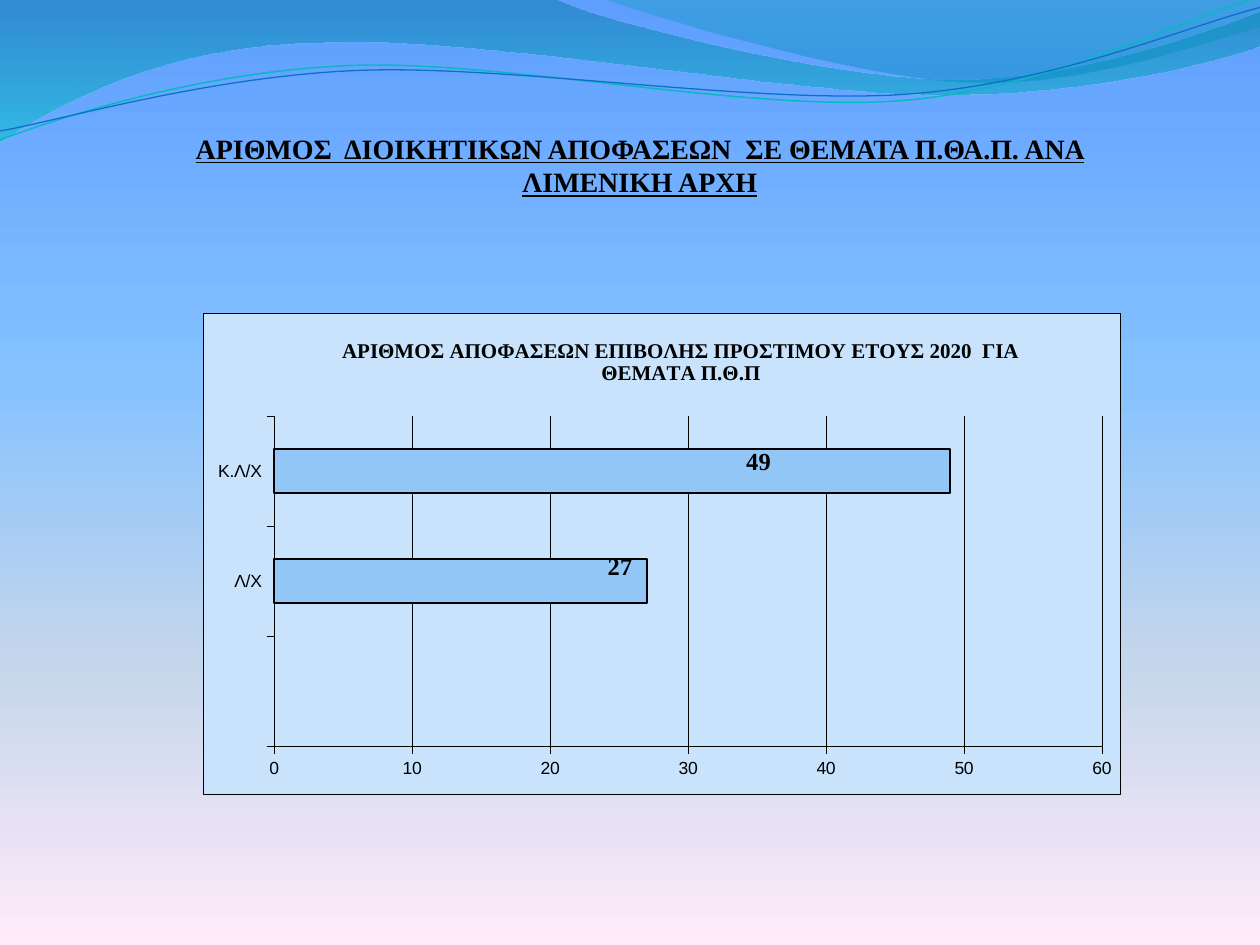
"""Build a slide with a wave header, a title and a bar chart of fines."""
import math
from lxml import etree
from pptx import Presentation
from pptx import util as u
from pptx.chart.data import CategoryChartData
from pptx.dml.color import RGBColor
from pptx.enum import chart as charts, text
from pptx.oxml import parse_xml
from pptx.oxml.ns import nsdecls, qn

BACKGROUND = [(0, "5E9EFF", 100), (40, "85C2FF", 100),
              (70, "C4D6EB", 100), (100, "FFEBFA", 100)]
LEFT_WAVE = [(0, -0.01), (4.4, -0.01), (4.76, 0.17, 6.64, 0.63, 7.58, 0.63),
             (8.53, 0.63, 9.58, 0.26, 10, 0.09), (10.01, 0.36),
             (9.83, 0.44, 8.7, 0.76, 7.46, 0.75),
             (6.22, 0.75, 3.82, 0.28, 2.57, 0.34),
             (1.29, 0.35, 0.46, 0.83, -0.01, 1.13), (0, -0.01)]
RIGHT_WAVE = [(4.79, -0.01), (5.09, 0.11, 6.82, 0.62, 7.69, 0.65),
              (8.56, 0.69, 9.61, 0.32, 10, 0.21), (10, 0), (4.79, -0.01)]
TEAL_LINE = [(0, 1.11), (0.48, 0.93, 1.58, 0.57, 2.77, 0.52),
             (3.95, 0.47, 5.93, 0.89, 7.13, 0.8),
             (8.33, 0.71, 9.38, 0.15, 9.98, -0.02)]
BLUE_LINE = [(0, 1.04), (0.47, 0.96, 1.64, 0.61, 2.83, 0.56),
             (4.03, 0.51, 5.97, 0.83, 7.17, 0.75),
             (8.36, 0.67, 9.41, 0.21, 10, 0.06)]
TILT = -2.7


def color(value):
    return RGBColor.from_string(value)


def turned(segments, degrees, center):
    """Rotate every point of the segments clockwise about a center."""
    cosine, sine = math.cos(math.radians(degrees)), math.sin(math.radians(degrees))
    cx, cy = center
    return [tuple(value for x, y in zip(segment[::2], segment[1::2])
                  for value in (cx + (x - cx) * cosine - (y - cy) * sine,
                                cy + (x - cx) * sine + (y - cy) * cosine))
            for segment in segments]


def gradient(fill, element, stops):
    """Fill from top to bottom with (position, colour, opacity) stops."""
    fill.gradient()
    fill.gradient_angle = 270
    stop_list = next(element.iter(qn("a:gsLst")))
    for stop in list(stop_list):
        stop_list.remove(stop)
    for position, value, opacity in stops:
        stop = etree.SubElement(stop_list, qn("a:gs"), pos=str(position * 1000))
        tint = etree.SubElement(stop, qn("a:srgbClr"), val=value)
        if opacity < 100:
            etree.SubElement(tint, qn("a:alpha"), val=str(opacity * 1000))


def layout(x, y, width=None, height=None, edge=False):
    """Return a manual chart layout from percentages of the chart."""
    values = {"layoutTarget": "inner"} if width else {}
    if edge:
        values.update(xMode="edge", yMode="edge")
    values.update(x=x / 100, y=y / 100)
    if width:
        values.update(w=width / 100, h=height / 100)
    items = "".join(f'<c:{key} val="{value}"/>' for key, value in values.items())
    return parse_xml(f'<c:layout {nsdecls("c")}><c:manualLayout>{items}'
                     '</c:manualLayout></c:layout>')


def place(parent, element, after=None):
    """Swap the layout of a chart part for another one."""
    for old in parent.findall(qn("c:layout")):
        parent.remove(old)
    if after is None:
        parent.insert(0, element)
    else:
        parent.find(qn(after)).addnext(element)


class SlideBuilder:
    """Hold the style and the current slide."""
    ink, serif, sans = "000000", "Times New Roman", "Arial"
    panel, bar = "C8E3FB", "91C6F7"

    def __init__(self, presentation):
        self.slide = presentation.slides.add_slide(presentation.slide_layouts[5])
        gradient(self.slide.background.fill, self.slide._element, BACKGROUND)

    def style(self, font, size, name, bold=False):
        font.size, font.name, font.bold = u.Pt(size), name, bold
        font.color.rgb = color(self.ink)

    def line(self, line, value, width):
        line.color.rgb, line.width = color(value), u.Pt(width)

    def curve(self, segments, closed):
        """Draw line (2 values) and cubic (6 values) segments given in inches."""
        points = [(u.Cm(x * 2.54), u.Cm(y * 2.54)) for segment in segments
                  for x, y in zip(segment[::2], segment[1::2])]
        builder = self.slide.shapes.build_freeform(*points[0])
        builder.add_line_segments(points[1:], close=closed)
        shape = builder.convert_to_shape()
        shape.shadow.inherit = False
        lines = iter(list(shape._element.iter(qn("a:lnTo"))))
        for segment in segments[1:]:
            first = next(lines)
            if len(segment) == 6:
                first.tag = qn("a:cubicBezTo")
                for _ in range(2):
                    extra = next(lines)
                    first.append(extra[0])
                    extra.getparent().remove(extra)
        return shape

    def wave(self, segments, stops):
        shape = self.curve(segments, True)
        gradient(shape.fill, shape._element, stops)
        shape.line.fill.background()

    def wave_line(self, segments, center, value, width):
        shape = self.curve(turned(segments, -TILT, center), False)
        shape.rotation = TILT
        shape.fill.background()
        self.line(shape.line, value, width)

    def title(self, words, left, top, width, height):
        shape = self.slide.shapes.title
        shape.left, shape.top, shape.width, shape.height = map(
            u.Cm, (left, top, width, height))
        frame = shape.text_frame
        frame.text = words
        frame.word_wrap = True
        frame.auto_size = text.MSO_AUTO_SIZE.NONE
        frame.vertical_anchor = text.MSO_ANCHOR.BOTTOM
        frame.margin_left = frame.margin_right = frame.margin_bottom = 0
        frame.margin_top = u.Cm(0.13)
        paragraph = frame.paragraphs[0]
        paragraph.alignment = text.PP_ALIGN.CENTER
        self.style(paragraph.font, 16, self.serif, True)
        paragraph.font.underline = True
        self.slide.shapes._spTree.append(shape._element)

    def bar_chart(self, heading, rows, label_shifts, left, top, width, height):
        data = CategoryChartData()
        data.categories = [name for name, _ in rows]
        data.add_series("Series 1", [value for _, value in rows])
        chart = self.slide.shapes.add_chart(
            charts.XL_CHART_TYPE.BAR_CLUSTERED,
            *map(u.Cm, (left, top, width, height)), data).chart
        self.style(chart.font, 10, self.sans)
        chart.has_legend = False
        self.chart_frame(chart, heading)
        self.axes(chart)
        plot = chart.plots[0]
        plot.gap_width, plot.vary_by_categories = 150, False
        series = plot.series[0]
        series.format.fill.solid()
        series.format.fill.fore_color.rgb = color(self.bar)
        self.line(series.format.line, self.ink, 1)
        labels = series.data_labels
        labels.show_value = True
        self.style(labels.font, 14, self.serif, True)
        for leader in labels._element.findall(qn("c:showLeaderLines")):
            leader.set("val", "0")
        for index, shift in label_shifts.items():
            label = series.points[index].data_label
            self.style(label.font, 14, self.serif, True)
            label.position = charts.XL_LABEL_POSITION.OUTSIDE_END
            place(labels._element.findall(qn("c:dLbl"))[-1], layout(*shift), "c:idx")
        labels._element.append(parse_xml(
            f'<c:extLst {nsdecls("c")}><c:ext uri="{{CE6537A1-D6FC-4f65-9D91-7224C49458BB}}" '
            'xmlns:c15="http://schemas.microsoft.com/office/drawing/2012/chart">'
            '<c15:showLeaderLines val="0"/></c:ext></c:extLst>'))

    def chart_frame(self, chart, heading):
        frame = chart.chart_title.text_frame
        frame.text = heading
        self.style(frame.paragraphs[0].font, 12, self.serif, True)
        chart.chart_title.include_in_layout = False
        area = chart._chartSpace.find(qn("c:chart"))
        place(area.find(qn("c:title")), layout(14.7, 4.2, edge=True), "c:tx")
        place(area.find(qn("c:plotArea")), layout(7.7, 21.3, 90.3, 68.7, edge=True))
        area.addnext(parse_xml(
            f'<c:spPr {nsdecls("c", "a")}><a:solidFill><a:srgbClr val="{self.panel}"/>'
            f'</a:solidFill><a:ln w="{u.Pt(0.25)}"><a:solidFill>'
            f'<a:srgbClr val="{self.ink}"/></a:solidFill></a:ln></c:spPr>'))

    def axes(self, chart):
        for axis in (chart.category_axis, chart.value_axis):
            axis.major_tick_mark = charts.XL_TICK_MARK.OUTSIDE
            axis.tick_label_position = charts.XL_TICK_LABEL_POSITION.LOW
            self.style(axis.tick_labels.font, 10, self.sans)
            self.line(axis.format.line, self.ink, 0.25)
        chart.value_axis.has_major_gridlines = True
        self.line(chart.value_axis.major_gridlines.format.line, self.ink, 0.25)


def main():
    presentation = Presentation()
    presentation.slide_width, presentation.slide_height = u.Cm(25.4), u.Cm(19.05)
    builder = SlideBuilder(presentation)
    builder.wave(LEFT_WAVE, [(0, "0074A1", 45), (100, "00C6CF", 55)])
    builder.wave(RIGHT_WAVE, [(0, "00A1A9", 30), (80, "008BBF", 45)])
    builder.wave_line(TEAL_LINE, (4.99, 0.58), "0AB8BF", 0.85)
    builder.wave_line(BLUE_LINE, (5, 0.59), "0F6FC6", 0.75)
    builder.title("ΑΡΙΘΜΟΣ  ΔΙΟΙΚΗΤΙΚΩΝ ΑΠΟΦΑΣΕΩΝ  ΣΕ ΘΕΜΑΤΑ Π.ΘΑ.Π. ΑΝΑ ΛΙΜΕΝΙΚΗ ΑΡΧΗ",
                  3.1, 1.2, 19.6, 2.8)
    builder.bar_chart("ΑΡΙΘΜΟΣ ΑΠΟΦΑΣΕΩΝ ΕΠΙΒΟΛΗΣ ΠΡΟΣΤΙΜΟΥ ΕΤΟΥΣ 2020  ΓΙΑ ΘΕΜΑΤΑ Π.Θ.Π",
                      [("", None), ("Λ/Χ", 27), ("Κ.Λ/Χ", 49)],
                      {1: (-4.8, -3), 2: (-22.8, -2)},
                      4.1, 6.32, 18.49, 9.7)
    presentation.save("out.pptx")


if __name__ == "__main__":
    main()
